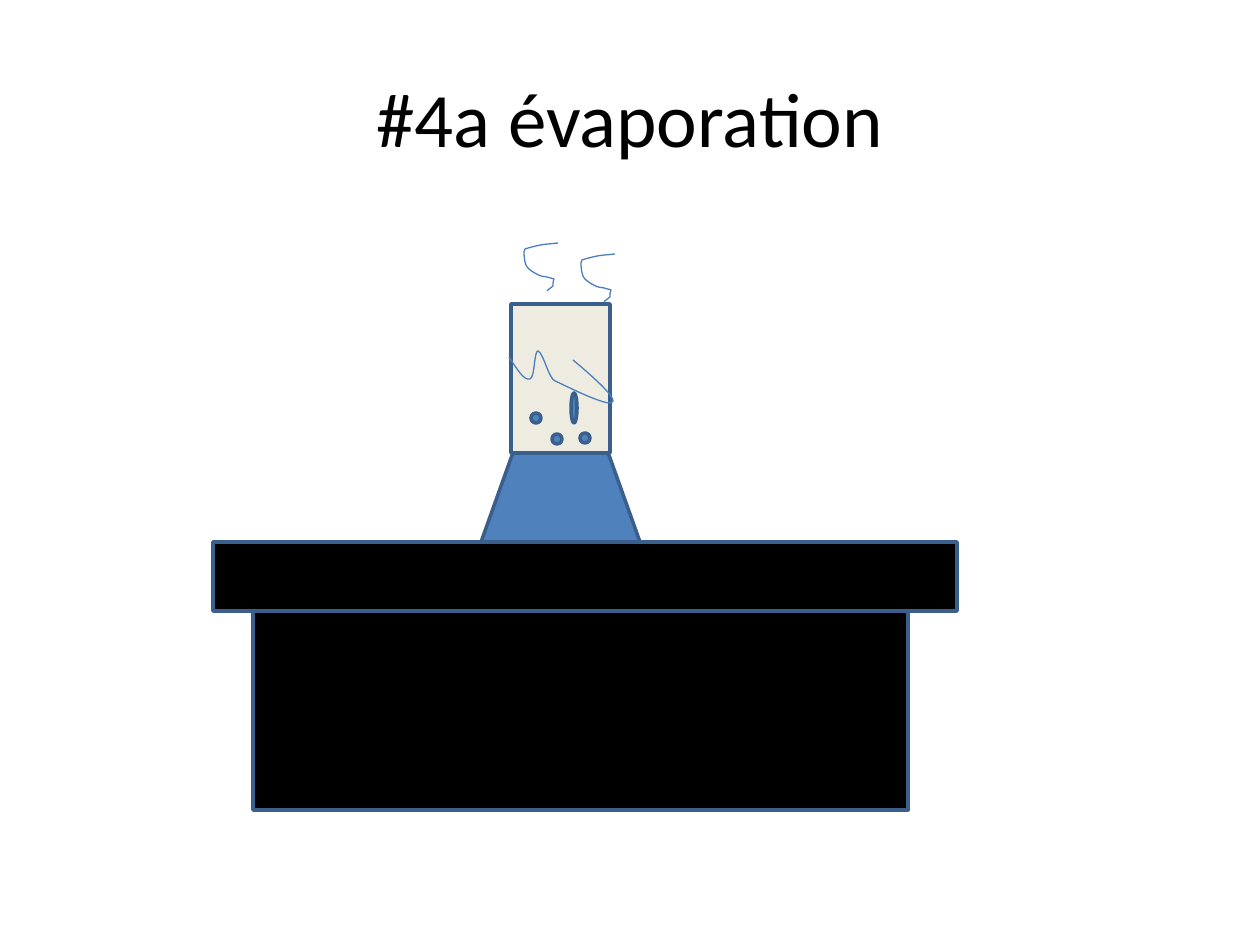
from lxml.etree import SubElement
from pptx import Presentation
from pptx.dml.color import RGBColor
from pptx.enum.shapes import MSO_SHAPE
from pptx.enum.text import MSO_ANCHOR, PP_ALIGN
from pptx.oxml.ns import qn
from pptx.util import Emu, Pt

PX_PER_INCH = 126
COLORS = {
    "black": "000000",
    "blue": "4F81BD",
    "cream": "EEECE1",
    "outline": "3A5F8C",
    "stroke": "4B7EBC",
}
# Each outline is a start point, then segments: three points curve, one point is a line.
LIQUID = [
    [(509, 357)],
    [(517, 369), (524, 381), (530, 379)],
    [(535, 378), (534, 351), (538, 351)],
    [(543, 352), (549, 379), (555, 381)],
    [(561, 383), (670, 441), (573, 360)],
]
STEAM = [
    [(558, 243)],
    [(551, 244), (543, 244), (536, 246)],
    [(532, 247), (528, 248), (525, 249)],
    [(524, 251), (524, 252), (524, 253)],
    [(524, 257), (525, 266), (528, 268)],
    [(533, 273), (541, 277), (547, 277)],
    [(554, 279)],
    [(553, 281), (553, 284), (553, 286)],
    [(552, 287), (549, 289), (548, 290)],
    [(547, 291)],
]


def px(length):
    return Emu(round(length * 914400 / PX_PER_INCH))


def color(name):
    return RGBColor.from_string(COLORS[name])


class Drawing:
    font_name = "Calibri"
    outline_width = Pt(2)
    stroke_width = Pt(0.75)

    def __init__(self, page):
        self.page = page

    def title(self, text, left, top, width, height):
        box = self.page.shapes.add_textbox(px(left), px(top), px(width), px(height))
        frame = box.text_frame
        frame.word_wrap = True
        frame.vertical_anchor = MSO_ANCHOR.MIDDLE
        para = frame.paragraphs[0]
        para.text = text
        para.alignment = PP_ALIGN.CENTER
        para.font.name = self.font_name
        para.font.size = Pt(44)
        para.font.color.rgb = color("black")

    def shape(self, kind, fill, left, top, width, height, rotation=0):
        shape = self.page.shapes.add_shape(kind, px(left), px(top), px(width), px(height))
        shape.rotation = rotation
        shape.shadow.inherit = False
        shape.fill.solid()
        shape.fill.fore_color.rgb = color(fill)
        shape.line.color.rgb = color("outline")
        shape.line.width = self.outline_width

    def curve(self, segments, dx=0, dy=0):
        """Draw a freeform through all points, then merge each curve's points into one cubic."""
        points = [(px(x + dx), px(y + dy)) for segment in segments for x, y in segment]
        builder = self.page.shapes.build_freeform(*points[0])
        builder.add_line_segments(points[1:], close=False)
        stroke = builder.convert_to_shape()
        lines = iter(list(stroke._element.iter(qn("a:lnTo"))))
        for segment in segments[1:]:
            group = [next(lines) for _ in segment]
            if len(group) == 3:
                outline = group[0].getparent()
                cubic = SubElement(outline, qn("a:cubicBezTo"))
                group[0].addprevious(cubic)
                for line in group:
                    cubic.append(line[0])
                    outline.remove(line)
        stroke.shadow.inherit = False
        stroke.fill.background()
        stroke.line.color.rgb = color("stroke")
        stroke.line.width = self.stroke_width


def main():
    deck = Presentation()
    deck.slide_width, deck.slide_height = px(1260), px(945)
    drawing = Drawing(deck.slides.add_slide(deck.slide_layouts[6]))

    drawing.title("#4a évaporation", 63, 38, 1134, 158)

    process = MSO_SHAPE.FLOWCHART_PROCESS
    drawing.shape(process, "black", 253, 611, 655, 199)  # desk body
    drawing.shape(process, "black", 213, 542, 744, 69)  # desk top
    drawing.shape(MSO_SHAPE.FLOWCHART_MANUAL_OPERATION, "blue", 481, 453, 159, 89, 180)
    drawing.shape(process, "cream", 511, 304, 99, 149)  # beaker

    bubbles = [(531, 413, 10, 10), (552, 434, 10, 10), (580, 433, 10, 10), (571, 393, 6, 30)]
    for bubble in bubbles:
        drawing.shape(MSO_SHAPE.FLOWCHART_CONNECTOR, "blue", *bubble)

    drawing.curve(LIQUID)
    for dx, dy in ((0, 0), (57, 11)):
        drawing.curve(STEAM, dx, dy)

    deck.save("out.pptx")


if __name__ == "__main__":
    main()
